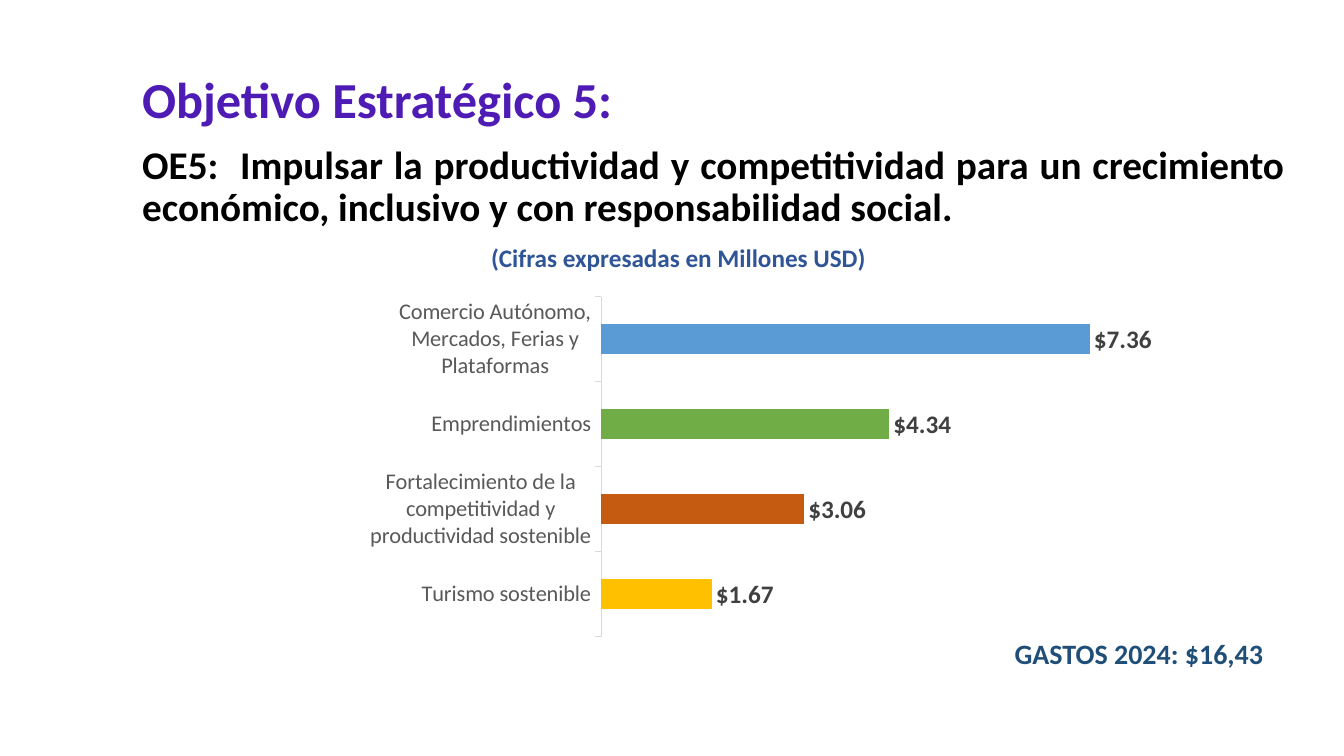
from dataclasses import dataclass

from lxml import etree
from pptx import Presentation
from pptx import util as u
from pptx.chart.data import CategoryChartData
from pptx.dml.color import RGBColor
from pptx.enum import chart as charts, shapes, text
from pptx.oxml import parse_xml
from pptx.oxml.ns import nsdecls


@dataclass(frozen=True)
class Theme:
    """Colours and type sizes of the slide."""
    font: str = "Calibri"
    heading: str = "4E1BB5"
    body: str = "000000"
    units: str = "2F5597"
    total: str = "1F4E79"
    axis_text: str = "595959"
    axis_line: str = "D9D9D9"
    label: str = "404040"
    background: str = "FFFFFF"
    heading_size: int = 36
    title_size: int = 28
    total_size: int = 20
    label_size: int = 18
    axis_size: int = 16


def assign(target, values):
    """Set each named attribute on the target."""
    for name, value in values.items():
        setattr(target, name, value)


class SlideBuilder:
    """Add styled elements to the current slide."""

    def __init__(self, presentation, theme):
        """Start a title-only slide."""
        self.theme = theme
        self.slide = presentation.slides.add_slide(presentation.slide_layouts[5])

    def format_font(self, font, size, color, bold=True):
        """Apply the theme font with a size and colour."""
        assign(font, {"name": self.theme.font, "size": u.Pt(size), "bold": bold})
        font.color.rgb = RGBColor.from_string(color)

    def fill_text(self, shape, wording, size, color, alignment, spacing=1.0):
        """Put one formatted paragraph in a shape."""
        frame = shape.text_frame
        frame.text = wording
        assign(frame, {
            "word_wrap": True,
            "auto_size": text.MSO_AUTO_SIZE.NONE,
            "vertical_anchor": text.MSO_ANCHOR.MIDDLE,
        })
        paragraph = frame.paragraphs[0]
        assign(paragraph, {"alignment": alignment, "line_spacing": spacing})
        self.format_font(paragraph.runs[0].font, size, color)

    def title(self, wording, box):
        """Move and fill the title placeholder."""
        shape = self.slide.shapes.title
        assign(shape, dict(zip(("left", "top", "width", "height"), map(u.Cm, box))))
        self.fill_text(shape, wording, self.theme.title_size, self.theme.body,
                       text.PP_ALIGN.JUSTIFY, 0.9)

    def text_box(self, wording, box, size, color, alignment):
        """Add a text box."""
        shape = self.slide.shapes.add_textbox(*map(u.Cm, box))
        self.fill_text(shape, wording, size, color, alignment)

    def panel(self, wording, box, size, color):
        """Add a filled rectangle with text."""
        shape = self.slide.shapes.add_shape(shapes.MSO_SHAPE.RECTANGLE, *map(u.Cm, box))
        shape.shadow.inherit = False
        shape.fill.solid()
        shape.fill.fore_color.rgb = RGBColor.from_string(self.theme.background)
        shape.line.fill.background()
        self.fill_text(shape, wording, size, color, text.PP_ALIGN.LEFT)

    def bar_chart(self, bars, box, plot_area, number_format):
        """Add a horizontal bar chart with one colour per bar."""
        theme = self.theme
        data = CategoryChartData()
        data.categories = [name for name, _, _ in bars]
        data.add_series("Series 1", [value for _, value, _ in bars])
        chart = self.slide.shapes.add_chart(
            charts.XL_CHART_TYPE.BAR_CLUSTERED, *map(u.Cm, box), data).chart
        assign(chart, {"has_legend": False, "has_title": False})
        self.format_font(chart.font, theme.axis_size, theme.axis_text, False)

        assign(chart.value_axis, {
            "minimum_scale": 0, "maximum_scale": 8,
            "has_major_gridlines": False, "visible": False,
        })
        axis = chart.category_axis
        axis.major_tick_mark = charts.XL_TICK_MARK.OUTSIDE
        axis.format.line.width = u.Pt(0.75)
        axis.format.line.color.rgb = RGBColor.from_string(theme.axis_line)
        self.format_font(axis.tick_labels.font, theme.axis_size, theme.axis_text, False)

        plot = chart.plots[0]
        assign(plot, {"gap_width": 182, "vary_by_categories": False,
                      "has_data_labels": True})
        assign(plot.data_labels, {
            "show_value": True, "number_format": number_format,
            "number_format_is_linked": False,
            "position": charts.XL_LABEL_POSITION.OUTSIDE_END,
        })
        self.format_font(plot.data_labels.font, theme.label_size, theme.label)
        for index, (_, _, color) in enumerate(bars):
            fill = plot.series[0].points[index].format.fill
            fill.solid()
            fill.fore_color.rgb = RGBColor.from_string(color)
        self.place_plot(chart, plot_area)

    def place_plot(self, chart, plot_area):
        """Fix the inner plot area as fractions of the chart."""
        area = chart._chartSpace.chart.plotArea
        for old_layout in area.findall("{*}layout"):
            area.remove(old_layout)
        layout = parse_xml(f"<c:layout {nsdecls('c')}><c:manualLayout/></c:layout>")
        namespace = etree.QName(layout.tag).namespace
        settings = {"layoutTarget": "inner", "xMode": "edge", "yMode": "edge",
                    **dict(zip("xywh", plot_area))}
        for name, value in settings.items():
            etree.SubElement(layout[0], f"{{{namespace}}}{name}").set("val", str(value))
        area.insert(0, layout)


def main():
    """Build and save the slide."""
    theme = Theme()
    presentation = Presentation()
    assign(presentation, {"slide_width": u.Cm(33.87), "slide_height": u.Cm(19.05)})
    builder = SlideBuilder(presentation, theme)
    left, width = 3.33, 29.29

    builder.text_box("(Cifras expresadas en Millones USD)", (11.8, 5.97, 10.6, 1.03),
                     theme.label_size, theme.units, text.PP_ALIGN.CENTER)
    builder.panel("GASTOS 2024: $16,43", (25.32, 15.9, 7.3, 1.11),
                  theme.total_size, theme.total)
    builder.title("OE5:  Impulsar la productividad y competitividad para un "
                  "crecimiento económico, inclusivo y con responsabilidad social.",
                  (left, 3.43, width, 2.6))
    builder.text_box("Objetivo Estratégico 5:", (left, 1.39, width, 2.16),
                     theme.heading_size, theme.heading, text.PP_ALIGN.LEFT)
    bars = [
        ("Turismo sostenible", 1.67, "FFC000"),
        ("Fortalecimiento de la competitividad y productividad sostenible",
         3.06, "C55A11"),
        ("Emprendimientos", 4.34, "70AD47"),
        ("Comercio Autónomo, Mercados, Ferias y Plataformas", 7.36, "5B9BD5"),
    ]
    builder.bar_chart(bars, (8.66, 7.01, 20.93, 9.32),
                      (0.31, 0.05, 0.64, 0.92), '"$"#,##0.00')
    presentation.save("out.pptx")


if __name__ == "__main__":
    main()
